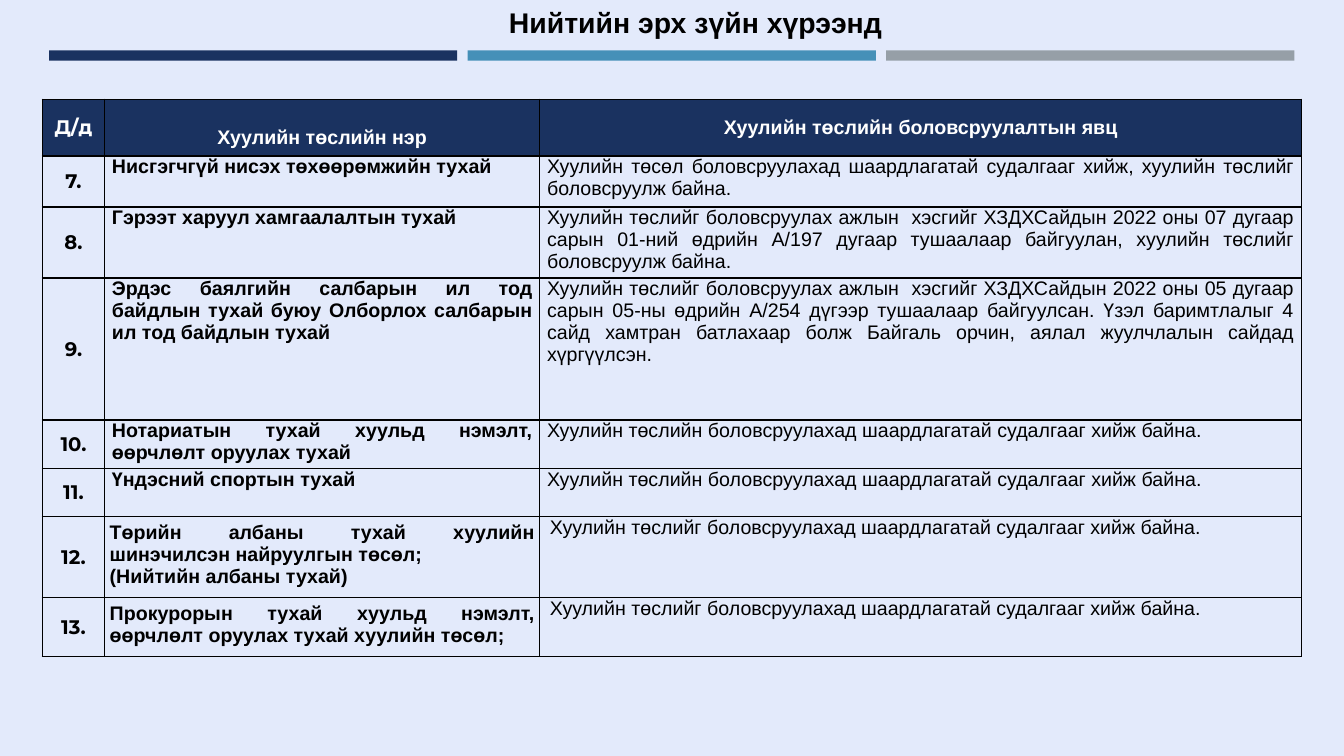
from pptx import Presentation
from pptx.dml.color import RGBColor
from pptx.enum.shapes import MSO_SHAPE
from pptx.enum.text import MSO_ANCHOR, PP_ALIGN
from pptx.oxml import parse_xml
from pptx.oxml.ns import nsdecls
from pptx.util import Pt

NAVY = RGBColor(0x1A, 0x32, 0x60)
BLUE = RGBColor(0x45, 0x90, 0xB8)
GRAY = RGBColor(0x96, 0x9F, 0xA7)
PALE = RGBColor(0xE3, 0xEA, 0xFB)
BLACK = RGBColor(0, 0, 0)
WHITE = RGBColor(0xFF, 0xFF, 0xFF)

HEADINGS = ["Д/д", "Хуулийн төслийн\u00a0нэр", "Хуулийн төслийн боловсруулалтын явц"]
STUDY_OF = "Хуулийн төслийн боловсруулахад шаардлагатай судалгааг хийж байна."
STUDY = "Хуулийн төслийг боловсруулахад шаардлагатай судалгааг хийж байна."
FIRST_NUMBER = 7
# Law name, progress, row height
LAWS = [
    ("Нисгэгчгүй нисэх төхөөрөмжийн тухай",
     "Хуулийн төсөл боловсруулахад шаардлагатай судалгааг хийж, хуулийн төслийг "
     "боловсруулж байна.", 36.4),
    ("Гэрээт харуул хамгаалалтын тухай",
     "Хуулийн төслийг боловсруулах ажлын  хэсгийг ХЗДХСайдын 2022 оны 07 дугаар "
     "сарын 01-ний өдрийн А/197 дугаар тушаалаар байгуулан, хуулийн төслийг "
     "боловсруулж байна.", 50.7),
    ("Эрдэс баялгийн салбарын ил тод байдлын тухай буюу Олборлох салбарын "
     "ил тод байдлын тухай",
     "Хуулийн төслийг боловсруулах ажлын  хэсгийг ХЗДХСайдын 2022 оны 05 дугаар "
     "сарын 05-ны өдрийн А/254 дүгээр тушаалаар байгуулсан. Үзэл баримтлалыг 4 "
     "сайд хамтран батлахаар болж Байгаль орчин, аялал жуулчлалын сайдад "
     "хүргүүлсэн.", 101.4),
    ("Нотариатын тухай хуульд нэмэлт, өөрчлөлт оруулах тухай", STUDY_OF, 34.6),
    ("Үндэсний спортын тухай", STUDY_OF, 34.6),
    ("Төрийн албаны тухай хуулийн шинэчилсэн найруулгын төсөл;\n"
     "(Нийтийн албаны тухай)", STUDY, 57.1),
    ("Прокурорын тухай хуульд нэмэлт, өөрчлөлт оруулах тухай хуулийн төсөл;",
     STUDY, 42.1),
]
HEADER_HEIGHT = 40.7
COLUMN_WIDTHS = [44.6, 310.8, 544.3]


def write_text(frame, text, align, size=14, name="Arial", bold=True, color=BLACK):
    frame.text = text
    font_values = {"size": Pt(size), "name": name, "bold": bold}
    for para in frame.paragraphs:
        para.alignment = align
        for span in para.runs:
            for key, value in font_values.items():
                setattr(span.font, key, value)
            span.font.color.rgb = color


def add_bar(page, left, color):
    bar = page.shapes.add_shape(MSO_SHAPE.RECTANGLE, Pt(left), Pt(36), Pt(291.6), Pt(7.4))
    bar.shadow.inherit = False
    bar.fill.solid()
    bar.fill.fore_color.rgb = color
    bar.line.fill.background()


def add_title(page, text):
    box = page.shapes.add_textbox(Pt(46.8), Pt(0), Pt(900), Pt(31.7))
    box.text_frame.word_wrap = True
    box.text_frame.vertical_anchor = MSO_ANCHOR.BOTTOM
    write_text(box.text_frame, text, PP_ALIGN.CENTER, size=20.3)


def add_borders(cell):
    properties = cell._tc.get_or_add_tcPr()
    for side in ("lnL", "lnR", "lnT", "lnB"):
        properties.append(parse_xml(
            f'<a:{side} {nsdecls("a")} w="{Pt(1)}"><a:solidFill>'
            f'<a:srgbClr val="{BLACK}"/></a:solidFill></a:{side}>'))


def fill_cell(cell, text, align, anchor=MSO_ANCHOR.TOP, side=0, vertical=0,
              fill=None, **font):
    add_borders(cell)
    if fill is None:
        cell.fill.background()
    else:
        cell.fill.solid()
        cell.fill.fore_color.rgb = fill
    cell_values = {"margin_left": Pt(side), "margin_right": Pt(side),
                   "margin_top": Pt(vertical), "margin_bottom": Pt(vertical),
                   "vertical_anchor": anchor}
    for key, value in cell_values.items():
        setattr(cell, key, value)
    write_text(cell.text_frame, text, align, **font)


def add_law_table(page):
    heights = [HEADER_HEIGHT] + [law[2] for law in LAWS]
    table = page.shapes.add_table(
        len(heights), len(COLUMN_WIDTHS), Pt(30.2), Pt(70.8),
        Pt(sum(COLUMN_WIDTHS)), Pt(sum(heights))).table
    table.first_row = table.horz_banding = False
    for column, width in zip(table.columns, COLUMN_WIDTHS):
        column.width = Pt(width)
    for row, height in zip(table.rows, heights):
        row.height = Pt(height)

    # Header row; the law name sits low in its cell
    for index, heading in enumerate(HEADINGS):
        low = index == 1
        fill_cell(table.cell(0, index), heading, PP_ALIGN.CENTER,
                  MSO_ANCHOR.BOTTOM if low else MSO_ANCHOR.MIDDLE,
                  vertical=5 if low else 0, fill=NAVY, color=WHITE,
                  name="Arial" if index else "Montserrat")

    # Body rows; the last two have their own margins
    for index, (law, progress, _) in enumerate(LAWS):
        number, name, status = table.rows[index + 1].cells
        late = index >= len(LAWS) - 2
        fill_cell(number, f"{FIRST_NUMBER + index}.", PP_ALIGN.CENTER,
                  MSO_ANCHOR.MIDDLE, name="Montserrat")
        fill_cell(name, law, PP_ALIGN.JUSTIFY, side=3.6 if late else 5.2,
                  vertical=3.6 if late else 0)
        fill_cell(status, progress, PP_ALIGN.JUSTIFY, side=7.2 if late else 5.2,
                  bold=False)


def main():
    deck = Presentation()
    deck.slide_width, deck.slide_height = Pt(960), Pt(540)
    page = deck.slides.add_slide(deck.slide_layouts[6])
    page.background.fill.solid()
    page.background.fill.fore_color.rgb = PALE

    # Heading bars and title
    for index, color in enumerate((NAVY, BLUE, GRAY)):
        add_bar(page, 35 + index * 299, color)
    add_title(page, "Нийтийн эрх зүйн хүрээнд")

    add_law_table(page)
    deck.save("out.pptx")


if __name__ == "__main__":
    main()
